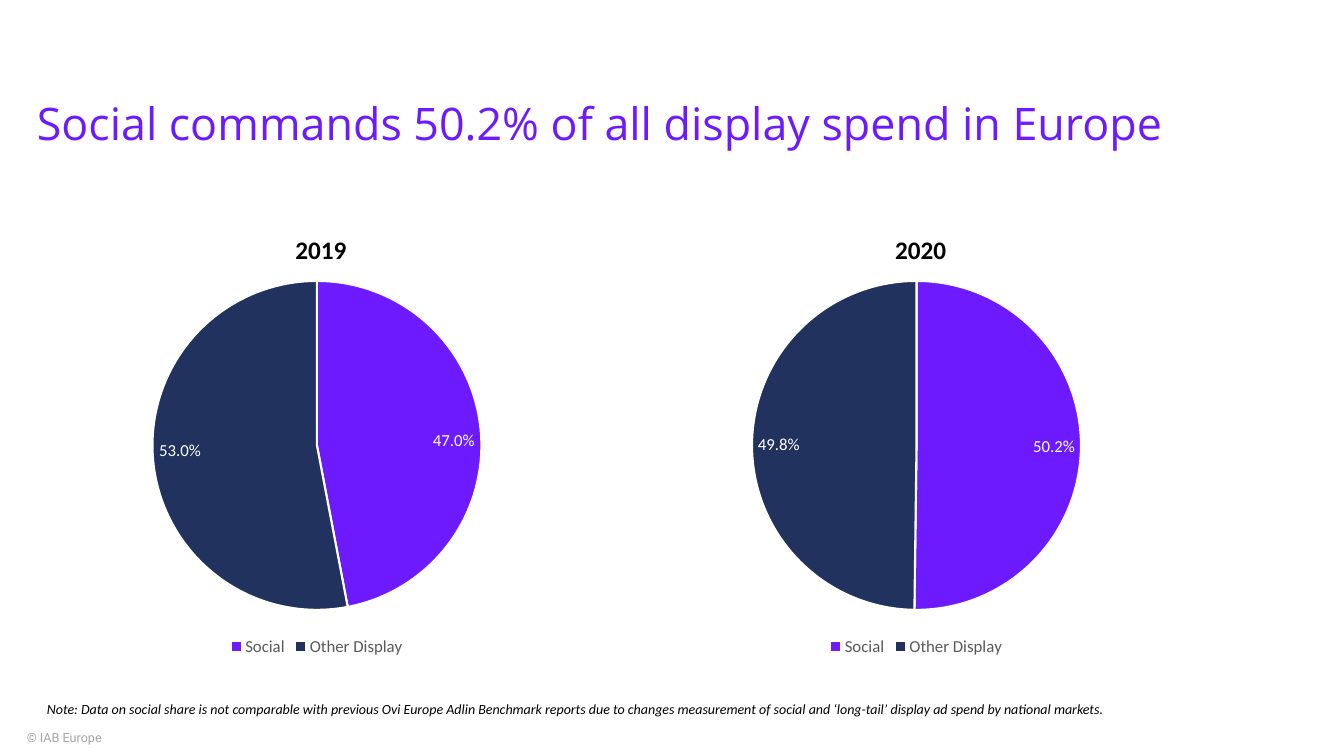
from lxml import etree
from pptx import Presentation
from pptx.chart.data import CategoryChartData
from pptx.dml.color import RGBColor
from pptx.enum.chart import XL_CHART_TYPE, XL_LABEL_POSITION, XL_LEGEND_POSITION
from pptx.enum.text import MSO_ANCHOR
from pptx.oxml.ns import qn
from pptx.util import Pt

EMU_PER_PX = 914400 / 100.8
VIOLET, NAVY, WHITE, BLACK = "6D1AFE", "21325E", "FFFFFF", "000000"
SLICES = {"Social": VIOLET, "Other Display": NAVY}
PIE_TOP, PIE_SIZE = 75, 329
YEAR_TOP, YEAR_WIDTH = 22, 52


def px(length):
    return round(length * EMU_PER_PX)


def color(hex_string):
    return RGBColor.from_string(hex_string)


def format_font(font, **values):
    font.color.rgb = color(values.pop("color"))
    font.size = Pt(values.pop("size"))
    for name, value in values.items():
        setattr(font, name, value)


def add_text(page, box, text, line_spacing=1.0, anchor=MSO_ANCHOR.TOP, **font_values):
    frame = page.shapes.add_textbox(*map(px, box)).text_frame
    frame.word_wrap = True
    frame.vertical_anchor = anchor
    para = frame.paragraphs[0]
    para.line_spacing = line_spacing
    span = para.add_run()
    span.text = text
    format_font(span.font, **font_values)


def set_layout(parent, index, **fractions):
    """Place a chart part by fractions of the chart's size."""
    for old in parent.findall(qn("c:layout")):
        parent.remove(old)
    layout = etree.Element(qn("c:layout"))
    manual = etree.SubElement(layout, qn("c:manualLayout"))
    if "w" in fractions:
        etree.SubElement(manual, qn("c:layoutTarget"), val="inner")
    for axis in "xy":
        etree.SubElement(manual, qn(f"c:{axis}Mode"), val="edge")
    for name, value in fractions.items():
        etree.SubElement(manual, qn(f"c:{name}"), val=f"{value:.4f}")
    parent.insert(index, layout)


def add_share_pie(page, box, year, shares):
    width, height = box[2:]
    data = CategoryChartData(number_format="0.0%")
    data.categories = list(SLICES)
    data.add_series("Series 1", shares)
    chart = page.shapes.add_chart(XL_CHART_TYPE.PIE, *map(px, box), data).chart
    format_font(chart.font, name="Calibri", size=10, color=BLACK)

    chart.has_title = True
    title = chart.chart_title
    span = title.text_frame.paragraphs[0].add_run()
    span.text = year
    format_font(span.font, name="Calibri", size=18, bold=True, color=BLACK)
    title.include_in_layout = False
    set_layout(title._element, 1, x=(width - YEAR_WIDTH) / 2 / width, y=YEAR_TOP / height)

    chart.has_legend = True
    chart.legend.position = XL_LEGEND_POSITION.BOTTOM
    chart.legend.include_in_layout = False
    format_font(chart.legend.font, name="Calibri", size=12, color="595959")

    plot = chart.plots[0]
    plot.vary_by_categories = True
    for index, fill_color in enumerate(SLICES.values()):
        slice_format = plot.series[0].points[index].format
        slice_format.fill.solid()
        slice_format.fill.fore_color.rgb = color(fill_color)
        slice_format.line.color.rgb = color(WHITE)
        slice_format.line.width = Pt(1.5)
    plot.has_data_labels = True
    labels = plot.data_labels
    label_values = {"show_value": True, "show_percentage": False, "number_format": "0.0%",
                    "number_format_is_linked": False,
                    "position": XL_LABEL_POSITION.INSIDE_END}
    for name, value in label_values.items():
        setattr(labels, name, value)
    format_font(labels.font, name="Calibri", size=12, color=WHITE)
    plot_area = chart._chartSpace.find(".//" + qn("c:plotArea"))
    set_layout(plot_area, 0, x=(width - PIE_SIZE) / 2 / width, y=PIE_TOP / height,
               w=PIE_SIZE / width, h=PIE_SIZE / height)


def add_share_slide(deck):
    page = deck.slides.add_slide(deck.slide_layouts[6])
    add_text(page, (17, 725, 364, 25), "© IAB Europe", name="Roboto", size=9, color="A6A6A6")
    add_text(page, (27, 75, 1225, 102), "Social commands 50.2% of all display spend in Europe",
             line_spacing=0.9, anchor=MSO_ANCHOR.MIDDLE,
             name="Open Sans", size=32, color=VIOLET)
    add_share_pie(page, (27, 206, 580, 455), "2019", (0.47, 0.53))
    add_share_pie(page, (653, 206, 527, 455), "2020", (0.502, 0.498))
    add_text(page, (37, 696, 1164, 27),
             "Note: Data on social share is not comparable with previous Ovi Europe Adlin "
             "Benchmark reports due to changes measurement of social and ‘long-tail’ "
             "display ad spend by national markets.",
             name="Calibri", size=10, italic=True, color=BLACK)


def main():
    deck = Presentation()
    deck.slide_width, deck.slide_height = px(1344), px(756)
    add_share_slide(deck)
    deck.save("out.pptx")


if __name__ == "__main__":
    main()
